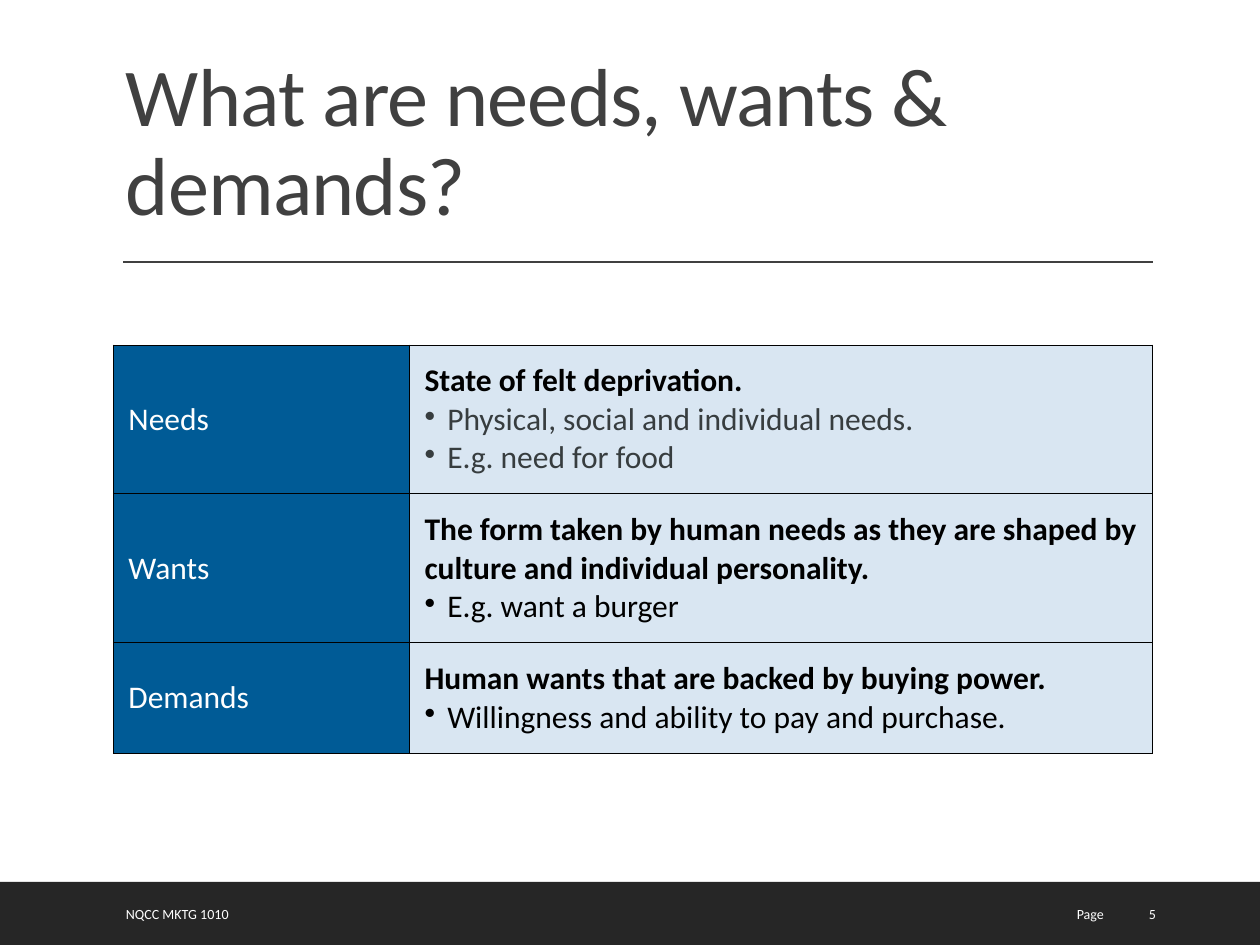
"""Build the slide that defines needs, wants and demands."""
from pptx import Presentation
from pptx.dml.color import RGBColor
from pptx.enum.shapes import MSO_CONNECTOR, MSO_SHAPE
from pptx.enum.text import MSO_ANCHOR as ANCHOR, PP_ALIGN as ALIGN
from pptx.oxml.ns import qn
from pptx.util import Inches, Pt
from lxml.etree import SubElement

TITLE = "What are needs, wants & demands?"
ROWS = [
    ("Needs", "State of felt deprivation.",
     ["Physical, social and individual needs.", "E.g. need for food"], "slate"),
    ("Wants", "The form taken by human needs as they are shaped "
     "by culture and individual personality.", ["E.g. want a burger"], "black"),
    ("Demands", "Human wants that are backed by buying power.",
     ["Willingness and ability to pay and purchase."], "black"),
]
FOOTER = [
    ("NQCC MKTG 1010", 0.9, 5.59, ALIGN.LEFT),
    ("Page", 6.74, 2.12, ALIGN.RIGHT),
    ("5", 9.02, 0.64, ALIGN.LEFT),
]
COLORS = {
    "white": "FFFFFF", "black": "000000", "title": "404040", "footer": "262626",
    "label": "FEFEFE", "slate": "373D3F", "blue": "005B96", "pale": "D9E6F2",
}
LEFT, WIDTH = 0.9, 8.25
COL_WIDTHS = [2.35, 5.9]
ROW_HEIGHTS = [1.18, 1.18, 0.88]
CELL_INSET = 0.12
BULLET_INDENT = 0.18


def rgb(name):
    return RGBColor.from_string(COLORS[name])


def add_text(p, text, size=18, color="black", bold=False, align=ALIGN.LEFT,
             line_spacing=None, after=0, tracking=None, bullet=False):
    p.alignment = align
    p.space_after = Pt(after)
    if line_spacing:
        p.line_spacing = line_spacing
    if bullet:
        p_pr = p._p.get_or_add_pPr()
        p_pr.set("marL", str(Inches(BULLET_INDENT)))
        p_pr.set("indent", str(-Inches(BULLET_INDENT)))
        SubElement(p_pr, qn("a:buChar"), char="•")
    r = p.add_run()
    r.text = text
    r.font.name, r.font.size, r.font.bold = "Calibri", Pt(size), bold
    r.font.color.rgb = rgb(color)
    if tracking:
        r._r.get_or_add_rPr().set("spc", str(int(tracking * 100)))


def add_box(s, text, left, top, width, height, anchor, **fmt):
    tf = s.shapes.add_textbox(*map(Inches, (left, top, width, height))).text_frame
    tf.word_wrap = True
    tf.vertical_anchor = anchor
    add_text(tf.paragraphs[0], text, **fmt)


def style_cell(cell, fill):
    cell.fill.solid()
    cell.fill.fore_color.rgb = rgb(fill)
    cell.vertical_anchor = ANCHOR.MIDDLE
    cell.margin_left = cell.margin_right = Inches(CELL_INSET)
    cell.margin_top = cell.margin_bottom = Inches(CELL_INSET)
    tc_pr = cell._tc.get_or_add_tcPr()
    for i, side in enumerate(("a:lnL", "a:lnR", "a:lnT", "a:lnB")):
        ln = tc_pr.makeelement(qn(side), {"w": str(Pt(0.75))})
        SubElement(SubElement(ln, qn("a:solidFill")), qn("a:srgbClr"),
                   val=COLORS["black"])
        tc_pr.insert(i, ln)


def add_definitions(s):
    frame = s.shapes.add_table(len(ROWS), 2, Inches(LEFT), Inches(2.74),
                               Inches(WIDTH), Inches(sum(ROW_HEIGHTS)))
    table = frame.table
    table.first_row = table.horz_banding = False
    for col, width in zip(table.columns, COL_WIDTHS):
        col.width = Inches(width)
    for i, (term, meaning, points, color) in enumerate(ROWS):
        table.rows[i].height = Inches(ROW_HEIGHTS[i])
        label, body = table.cell(i, 0), table.cell(i, 1)
        style_cell(label, "blue")
        style_cell(body, "pale")
        add_text(label.text_frame.paragraphs[0], term, color="label")
        tf = body.text_frame
        add_text(tf.paragraphs[0], meaning, bold=True)
        for point in points:
            add_text(tf.add_paragraph(), point, color=color, bullet=True)


def add_rule(s):
    rule = s.shapes.add_connector(MSO_CONNECTOR.STRAIGHT, Inches(0.98), Inches(2.08),
                                  Inches(LEFT + WIDTH), Inches(2.08))
    rule.line.color.rgb = rgb("title")
    rule.line.width = Pt(1)
    SubElement(rule._element.spPr, qn("a:effectLst"))


def add_footer(s):
    band = s.shapes.add_shape(MSO_SHAPE.RECTANGLE, 0, Inches(7), Inches(10), Inches(0.5))
    band.shadow.inherit = False
    band.fill.solid()
    band.fill.fore_color.rgb = rgb("footer")
    band.line.fill.background()
    for text, left, width, align in FOOTER:
        add_box(s, text, left, 7.05, width, 0.4, ANCHOR.MIDDLE,
                size=8, color="white", align=align, after=6)


def main():
    prs = Presentation()
    prs.slide_width, prs.slide_height = Inches(10), Inches(7.5)
    s = prs.slides.add_slide(prs.slide_layouts[6])
    s.background.fill.solid()
    s.background.fill.fore_color.rgb = rgb("white")
    add_box(s, TITLE, LEFT, 0.31, WIDTH, 1.59, ANCHOR.BOTTOM,
            size=47, color="title", line_spacing=0.9, tracking=-0.5)
    add_rule(s)
    add_footer(s)
    add_definitions(s)
    prs.save("out.pptx")


if __name__ == "__main__":
    main()
